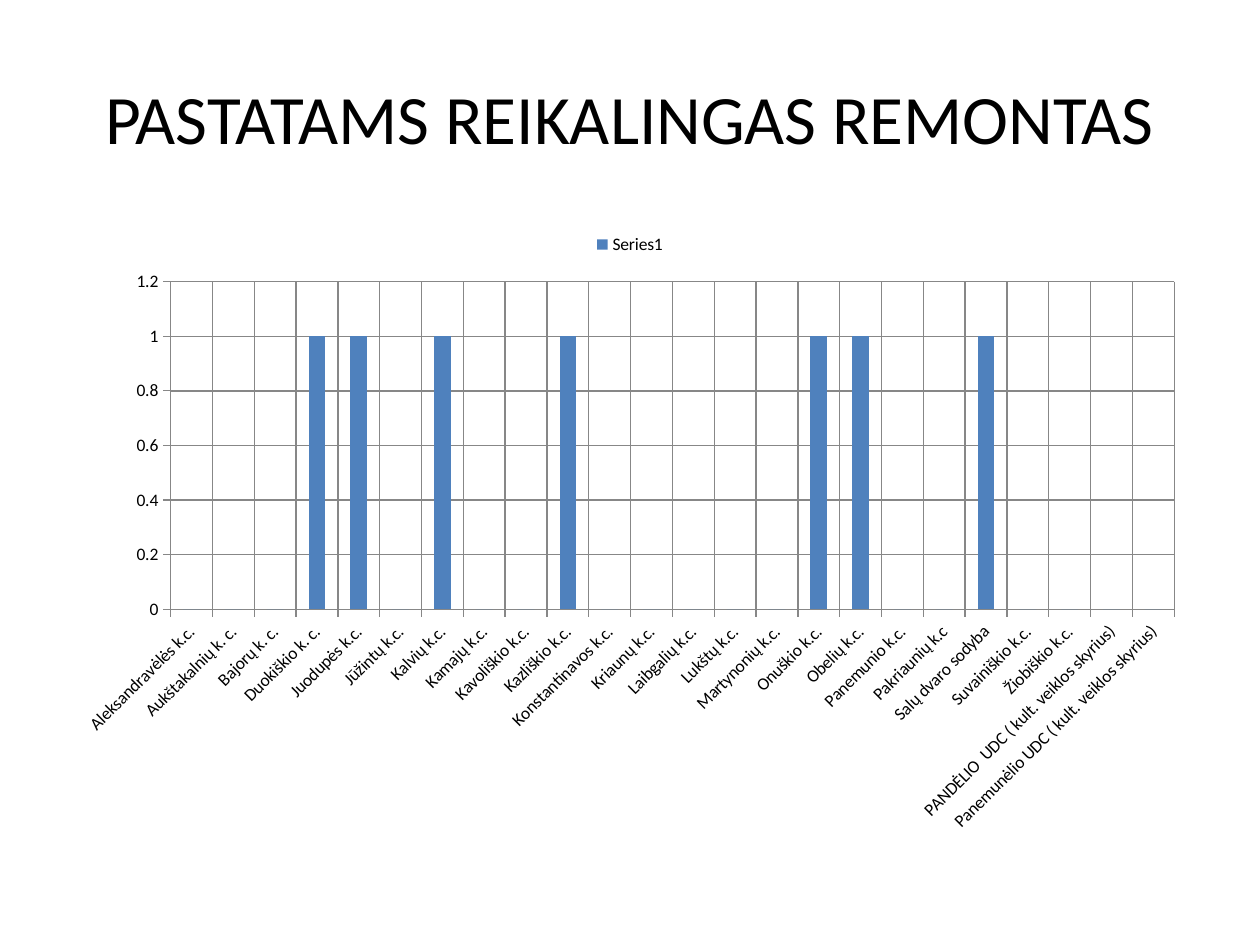
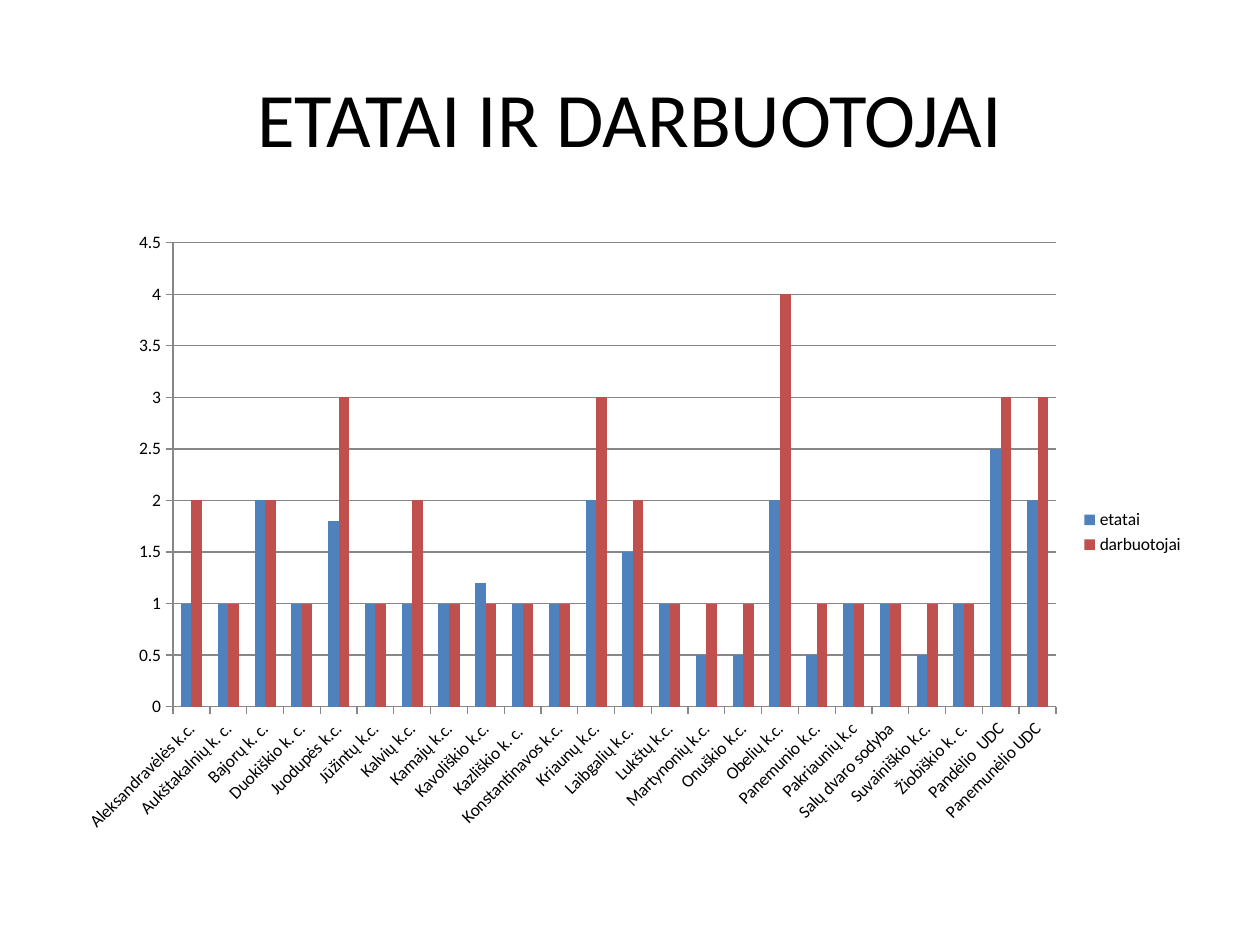
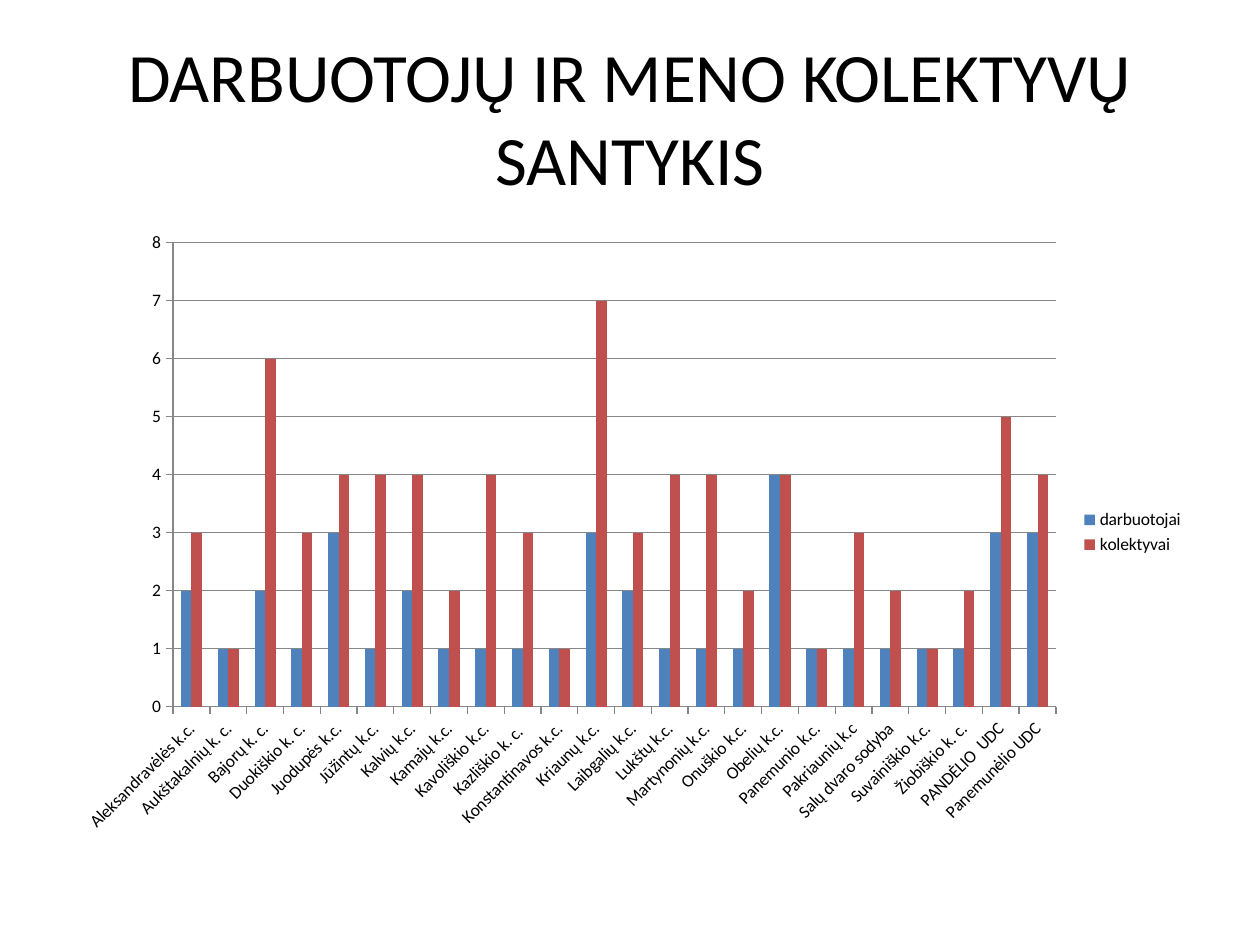
from pptx import Presentation
from pptx.chart.data import CategoryChartData
from pptx.dml.color import RGBColor
from pptx.enum.chart import XL_CHART_TYPE, XL_LEGEND_POSITION, XL_TICK_MARK
from pptx.enum.text import MSO_ANCHOR, PP_ALIGN
from pptx.util import Inches, Pt

COLUMNS = XL_CHART_TYPE.COLUMN_CLUSTERED
TOP, RIGHT = XL_LEGEND_POSITION.TOP, XL_LEGEND_POSITION.RIGHT
OUTSIDE, NO_TICK = XL_TICK_MARK.OUTSIDE, XL_TICK_MARK.NONE
MIDDLE, CENTER = MSO_ANCHOR.MIDDLE, PP_ALIGN.CENTER

COLOURS = {"text": "000000", "grid": "878787", "first": "4F81BD", "second": "C0504D"}
SERIES_COLOURS = ("first", "second")
FONT = "Calibri"
SLIDE_WIDTH, SLIDE_HEIGHT = Inches(10), Inches(7.5)

# Left, top, width and height as shares of the slide
TITLE_BOX = (0.05, 0.04, 0.9, 1 / 6)
CHART_BOX = (0.05, 7 / 30, 0.9, 0.66)
LABEL_ROTATION = -45 * 60000

CENTRES = [
    "Aleksandravėlės k.c.", "Aukštakalnių k. c.", "Bajorų k. c.", "Duokiškio k. c.",
    "Juodupės k.c.", "Jūžintų k.c.", "Kalvių k.c.", "Kamajų k.c.",
    "Kavoliškio k.c.", "Kazliškio k. c. ", "Konstantinavos k.c.", "Kriaunų k.c.",
    "Laibgalių k.c.", "Lukštų k.c.", "Martynonių k.c.", "Onuškio k.c.",
    "Obelių k.c.", "Panemunio k.c.", "Pakriaunių k.c", "Salų dvaro sodyba",
    "Suvainiškio k.c.", "Žiobiškio k. c.", "PANDĖLIO  UDC", "Panemunėlio UDC",
]
REPAIR_NAMES = {
    "Kazliškio k. c. ": "Kazliškio k.c.",
    "Žiobiškio k. c.": "Žiobiškio k.c.",
    "PANDĖLIO  UDC": "PANDĖLIO  UDC ( kult. veiklos skyrius)",
    "Panemunėlio UDC": "Panemunėlio UDC ( kult. veiklos skyrius)",
}
STAFF_NAMES = {"Laibgalių k.c.": "Laibgalių k.c. ", "PANDĖLIO  UDC": "Pandėlio  UDC"}

REPAIRS = [0, 0, 0, 1, 1, 0, 1, 0, 0, 1, 0, 0, 0, 0, 0, 1, 1, 0, 0, 1, 0, 0, 0, 0]
POSITIONS = [1, 1, 2, 1, 1.8, 1, 1, 1, 1.2, 1, 1, 2,
             1.5, 1, 0.5, 0.5, 2, 0.5, 1, 1, 0.5, 1, 2.5, 2]
EMPLOYEES = [2, 1, 2, 1, 3, 1, 2, 1, 1, 1, 1, 3, 2, 1, 1, 1, 4, 1, 1, 1, 1, 1, 3, 3]
ENSEMBLES = [3, 1, 6, 3, 4, 4, 4, 2, 4, 3, 1, 7, 3, 4, 4, 2, 4, 1, 3, 2, 1, 2, 5, 4]

SLIDES = [
    {"title": "PASTATAMS REIKALINGAS REMONTAS", "title_size": 39.6,
     "renamed": REPAIR_NAMES, "series": {"Series1": REPAIRS},
     "legend": TOP, "maximum": 1.2, "step": 0.2, "category_grid": True},
    {"title": "ETATAI IR DARBUOTOJAI", "title_size": 44,
     "renamed": STAFF_NAMES, "series": {"etatai": POSITIONS, "darbuotojai": EMPLOYEES},
     "legend": RIGHT, "maximum": 4.5, "step": 0.5, "category_grid": False},
    {"title": "DARBUOTOJŲ IR MENO KOLEKTYVŲ SANTYKIS", "title_size": 39.6,
     "renamed": {}, "series": {"darbuotojai": EMPLOYEES, "kolektyvai": ENSEMBLES},
     "legend": RIGHT, "maximum": 8, "step": 1, "category_grid": False},
]


def colour(name):
    return RGBColor.from_string(COLOURS[name])


def set_all(target, values):
    for name, value in values.items():
        setattr(target, name, value)


def place(box):
    """Turn shares of the slide into lengths."""
    sides = (SLIDE_WIDTH, SLIDE_HEIGHT) * 2
    return [round(share * side) for share, side in zip(box, sides)]


def style_font(font, size):
    set_all(font, {"name": FONT, "size": Pt(size)})
    font.color.rgb = colour("text")


def style_line(line):
    line.color.rgb = colour("grid")
    line.width = Pt(0.75)


def add_title(slide, box, text, size):
    frame = slide.shapes.add_textbox(*place(box)).text_frame
    set_all(frame, {"word_wrap": True, "vertical_anchor": MIDDLE})
    paragraph = frame.paragraphs[0]
    paragraph.alignment = CENTER
    run = paragraph.add_run()
    run.text = text
    style_font(run.font, size)


def style_axis(axis, gridlines):
    set_all(axis, {"major_tick_mark": OUTSIDE, "minor_tick_mark": NO_TICK,
                   "has_major_gridlines": gridlines})
    style_line(axis.format.line)
    if gridlines:
        style_line(axis.major_gridlines.format.line)
    style_font(axis.tick_labels.font, 10)


def add_column_chart(slide, box, content):
    chart_data = CategoryChartData()
    chart_data.categories = [content["renamed"].get(name, name) for name in CENTRES]
    for name, values in content["series"].items():
        chart_data.add_series(name, values)
    chart = slide.shapes.add_chart(COLUMNS, *place(box), chart_data).chart
    set_all(chart, {"has_title": False, "has_legend": True})
    style_font(chart.font, 10)
    set_all(chart.legend, {"position": content["legend"], "include_in_layout": False})

    plot = chart.plots[0]
    set_all(plot, {"gap_width": 150, "overlap": 0, "vary_by_categories": False})
    for series, name in zip(plot.series, SERIES_COLOURS):
        series.format.fill.solid()
        series.format.fill.fore_color.rgb = colour(name)

    centres, amounts = chart.category_axis, chart.value_axis
    style_axis(centres, content["category_grid"])
    style_axis(amounts, True)
    set_all(amounts, {"minimum_scale": 0, "maximum_scale": content["maximum"],
                      "major_unit": content["step"]})
    label_body = centres._element.txPr.bodyPr
    label_body.set("rot", str(LABEL_ROTATION))
    label_body.set("vert", "horz")


def add_chart_slide(deck, content):
    slide = deck.slides.add_slide(deck.slide_layouts[6])
    add_title(slide, TITLE_BOX, content["title"], content["title_size"])
    add_column_chart(slide, CHART_BOX, content)


def main():
    deck = Presentation()
    set_all(deck, {"slide_width": SLIDE_WIDTH, "slide_height": SLIDE_HEIGHT})
    for content in SLIDES:
        add_chart_slide(deck, content)
    deck.save("out.pptx")


if __name__ == "__main__":
    main()
